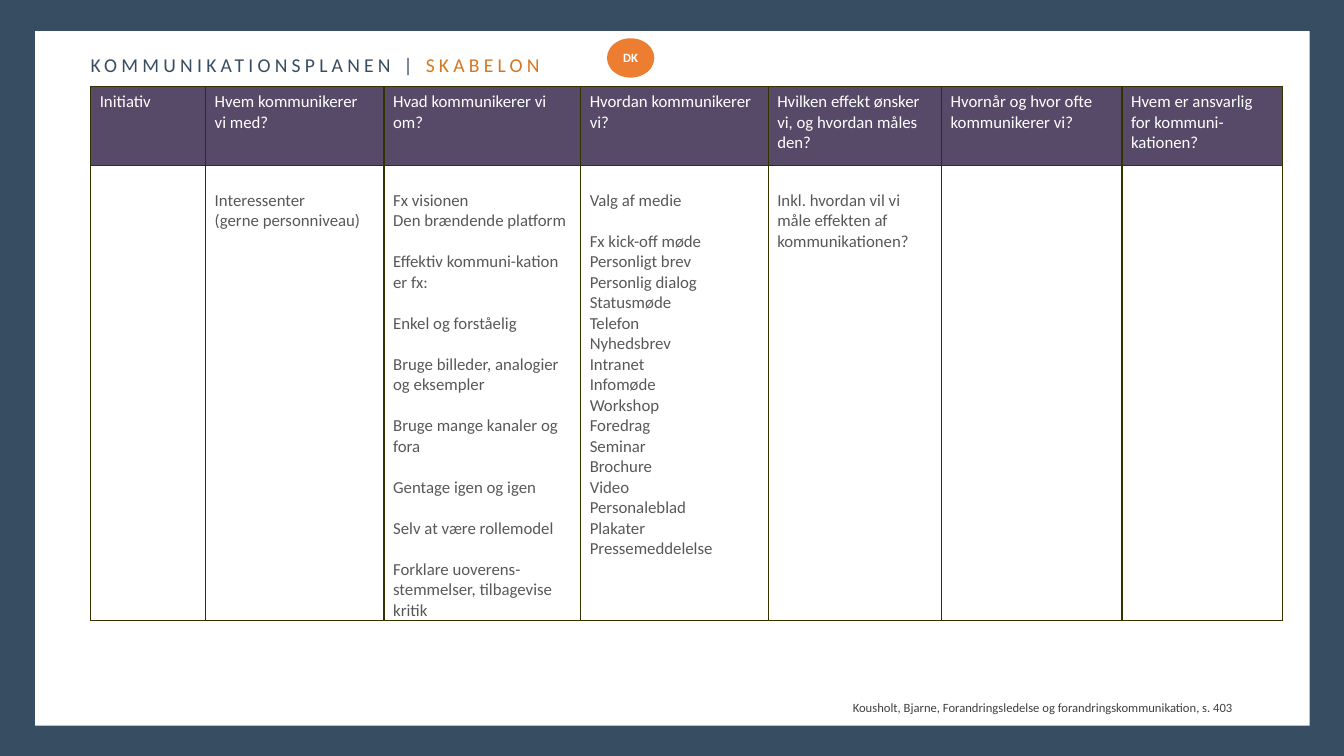
from typing import NamedTuple

from lxml.etree import SubElement
from pptx import Presentation
from pptx.dml.color import RGBColor
from pptx.enum.shapes import MSO_SHAPE as SHAPE
from pptx.enum.text import MSO_ANCHOR as ANCHOR, MSO_AUTO_SIZE as AUTO, PP_ALIGN as ALIGN
from pptx.oxml.ns import qn
from pptx.util import Inches, Pt

NAVY = RGBColor(0x37, 0x4D, 0x62)
WHITE = RGBColor(0xFF, 0xFF, 0xFF)
PURPLE = RGBColor(0x57, 0x49, 0x68)
GREY = RGBColor(0x58, 0x58, 0x5A)
DARK = RGBColor(0x40, 0x40, 0x40)
AMBER = RGBColor(0xD7, 0x76, 0x21)
ORANGE = RGBColor(0xED, 0x7D, 0x31)
OLIVE = RGBColor(0x33, 0x33, 0x00)
FONT = "Calibri"
LINE_GAP = Pt(14.65)


class Column(NamedTuple):
    width: float
    header: tuple[str, ...]
    groups: tuple[tuple[str, ...], ...] = ()


COLUMNS = (
    Column(1.14, ("Initiativ",)),
    Column(1.77, ("Hvem kommunikerer", "vi med?"),
           (("Interessenter", "(gerne personniveau)"),)),
    Column(1.95, ("Hvad kommunikerer vi om?",), (
        ("Fx visionen", "Den brændende platform"),
        ("Effektiv kommuni-kation er fx:",),
        ("Enkel og forståelig",),
        ("Bruge billeder, analogier og eksempler",),
        ("Bruge mange kanaler og fora",),
        ("Gentage igen og igen",),
        ("Selv at være rollemodel",),
        ("Forklare uoverens-stemmelser, tilbagevise kritik",),
    )),
    Column(1.86, ("Hvordan kommunikerer vi?",), (
        ("Valg af medie",),
        ("Fx kick-off møde", "Personligt brev", "Personlig dialog", "Statusmøde",
         "Telefon", "Nyhedsbrev", "Intranet", "Infomøde", "Workshop", "Foredrag",
         "Seminar", "Brochure", "Video", "Personaleblad", "Plakater",
         "Pressemeddelelse"),
    )),
    Column(1.72, ("Hvilken effekt ønsker vi, og hvordan måles den?",),
           (("Inkl. hvordan vil vi måle effekten af kommunikationen?",),)),
    Column(1.79, ("Hvornår og hvor ofte kommunikerer vi?",)),
    Column(1.59, ("Hvem er ansvarlig for kommuni-kationen?",)),
)


def add_run(p, text: str, size: float, color: RGBColor, bold: bool = False):
    r = p.add_run()
    r.text = text
    r.font.name = FONT
    r.font.size = Pt(size)
    r.font.bold = bold
    r.font.color.rgb = color
    return r


def add_filled(slide, kind, box: tuple[float, ...], color: RGBColor):
    sp = slide.shapes.add_shape(kind, *map(Inches, box))
    sp.shadow.inherit = False
    sp.fill.solid()
    sp.fill.fore_color.rgb = color
    sp.line.fill.background()
    return sp


def border_cell(cell) -> None:
    props = cell._tc.get_or_add_tcPr()
    for index, side in enumerate(("a:lnL", "a:lnR", "a:lnT", "a:lnB")):
        line = props.makeelement(qn(side), {"w": str(Pt(1))})
        fill = SubElement(line, qn("a:solidFill"))
        SubElement(fill, qn("a:srgbClr"), val=str(OLIVE))
        props.insert(index, line)


def fill_cell(cell, groups: tuple[tuple[str, ...], ...], color: RGBColor) -> None:
    cell.margin_left = cell.margin_right = Inches(0.09)
    tf = cell.text_frame
    p = tf.paragraphs[0]
    p.font.size = Pt(12)
    for g, group in enumerate(groups):
        for n, text in enumerate(group):
            if g or n:
                p = tf.add_paragraph()
            if g and n == 0:
                p.space_before = LINE_GAP
            add_run(p, text, 12, color)


def add_plan(slide) -> None:
    width = sum(column.width for column in COLUMNS)
    frame = slide.shapes.add_table(2, len(COLUMNS), Inches(0.9), Inches(0.86),
                                   Inches(width), Inches(5.26))
    table = frame.table
    table.first_row = table.horz_banding = False
    table.rows[0].height = Inches(0.78)
    table.rows[1].height = Inches(4.48)
    for i, column in enumerate(COLUMNS):
        table.columns[i].width = Inches(column.width)
        head, body = table.cell(0, i), table.cell(1, i)
        head.fill.solid()
        head.fill.fore_color.rgb = PURPLE
        fill_cell(head, (column.header,), WHITE)
        body.fill.background()
        body.margin_top, body.margin_bottom = Inches(0.25), 0
        fill_cell(body, column.groups, GREY)
        border_cell(head)
        border_cell(body)


def add_title(slide) -> None:
    title = slide.shapes.title
    title.left, title.top = Inches(0.8), Inches(0.47)
    title.width, title.height = Inches(5.1), Inches(0.34)
    tf = title.text_frame
    tf.auto_size = AUTO.NONE
    tf.vertical_anchor = ANCHOR.MIDDLE
    p = tf.paragraphs[0]
    p.alignment = ALIGN.LEFT
    for text, color in (("KOMMUNIKATIONSPLANEN | ", NAVY), ("SKABELON", AMBER)):
        r = add_run(p, text, 14, color)
        r.font._element.set("spc", "300")


def add_source(slide) -> None:
    box = slide.shapes.add_textbox(Inches(8.36), Inches(6.89), Inches(4.4), Inches(0.25))
    tf = box.text_frame
    tf.word_wrap = True
    add_run(tf.paragraphs[0],
            "Kousholt, Bjarne, Forandringsledelse og forandringskommunikation, s. 403",
            9, DARK)


def add_badge(slide) -> None:
    badge = add_filled(slide, SHAPE.OVAL, (6.02, 0.38, 0.47, 0.39), ORANGE)
    tf = badge.text_frame
    tf.margin_left = tf.margin_right = tf.margin_top = tf.margin_bottom = 0
    tf.vertical_anchor = ANCHOR.MIDDLE
    p = tf.paragraphs[0]
    p.alignment = ALIGN.CENTER
    add_run(p, "DK", 9, WHITE, bold=True)


def main() -> None:
    prs = Presentation()
    prs.slide_width, prs.slide_height = Inches(13.33), Inches(7.5)
    slide = prs.slides.add_slide(prs.slide_layouts[5])
    slide.background.fill.solid()
    slide.background.fill.fore_color.rgb = NAVY
    panel = add_filled(slide, SHAPE.RECTANGLE, (0.35, 0.31, 12.64, 6.89), WHITE)
    slide.shapes.title._element.addprevious(panel._element)
    add_plan(slide)
    add_source(slide)
    add_title(slide)
    add_badge(slide)
    prs.save("out.pptx")


if __name__ == "__main__":
    main()
